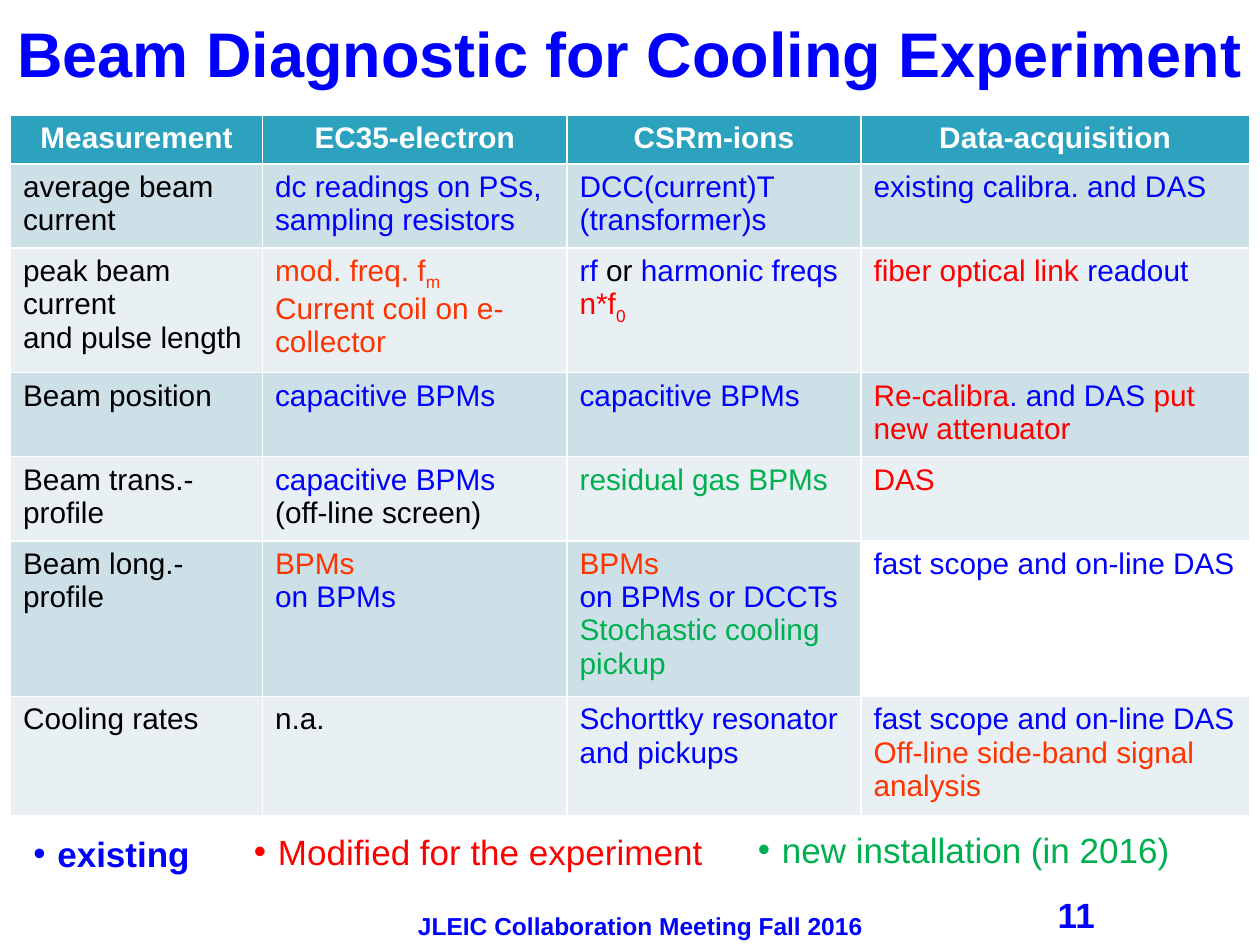
from lxml.etree import SubElement
from pptx import Presentation
from pptx.dml.color import RGBColor
from pptx.enum.text import MSO_ANCHOR as Anchor, PP_ALIGN as Align
from pptx.oxml.ns import qn
from pptx.util import Inches, Pt

BLACK, WHITE, BLUE = "000000", "FFFFFF", "0000FF"
RED, ORANGE, GREEN = "FF0000", "FF3300", "00B050"
TEAL, BAND_DARK, BAND_LIGHT = "2DA2BF", "CDE0E8", "E8F0F4"
COLUMNS, ROWS = 120, 90


def rgb(code):
    return RGBColor.from_string(code)


deck = Presentation()
deck.slide_width, deck.slide_height = Inches(10), Inches(7.5)
column, row = deck.slide_width / COLUMNS, deck.slide_height / ROWS
slide = deck.slides.add_slide(deck.slide_layouts[6])


def add_label(text, area, size, colour, bold=True, anchor=Anchor.TOP, bullet=False):
    left, top, width, height = area
    label = slide.shapes.add_textbox(int(left * column), int(top * row),
                                     int(width * column), int(height * row))
    frame = label.text_frame
    frame.word_wrap = not bullet
    frame.vertical_anchor = anchor
    paragraph = frame.paragraphs[0]
    paragraph.text = text
    paragraph.alignment = Align.LEFT if bullet else Align.CENTER
    if bullet:
        properties = paragraph._p.get_or_add_pPr()
        properties.set("marL", str(Inches(0.19)))
        properties.set("indent", str(-Inches(0.19)))
        SubElement(properties, qn("a:buFont")).set("typeface", "Arial")
        SubElement(properties, qn("a:buChar")).set("char", "•")
    font = paragraph.font
    font.name, font.size, font.bold = "Arial", Pt(size), bold
    font.color.rgb = rgb(colour)


add_label("Beam Diagnostic for Cooling Experiment", (0, 0, COLUMNS, 10), 36, BLUE,
          anchor=Anchor.MIDDLE)

headings = ["Measurement", "EC35-electron", "CSRm-ions", "Data-acquisition"]
measurements = [
    [[[("average beam current", BLACK)]],
     [[("dc readings on PSs, sampling resistors", BLUE)]],
     [[("DCC(current)T (transformer)s", BLUE)]],
     [[("existing calibra. and DAS", BLUE)]]],
    [[[("peak beam current", BLACK)], [("and pulse length", BLACK)]],
     [[("mod. freq. f", ORANGE), ("m", ORANGE, "subscript")],
      [("Current coil on e-collector", ORANGE)]],
     [[("rf", BLUE), (" or ", BLACK), ("harmonic freqs ", BLUE),
       ("n*f", RED), ("0", RED, "subscript")]],
     [[("fiber optical link ", RED), ("readout", BLUE)]]],
    [[[("Beam position", BLACK)]],
     [[("capacitive BPMs", BLUE)]],
     [[("capacitive BPMs", BLUE)]],
     [[("Re-calibra", RED), (". and DAS ", BLUE), ("put new attenuator", RED)]]],
    [[[("Beam trans.-profile", BLACK)]],
     [[("capacitive BPMs", BLUE)], [("(off-line screen)", BLACK)]],
     [[("residual gas BPMs", GREEN)]],
     [[("DAS", RED)]]],
    [[[("Beam long.-profile", BLACK)]],
     [[("BPMs", ORANGE)], [("on BPMs", BLUE)]],
     [[("BPMs", ORANGE)], [("on BPMs or DCCTs", BLUE)],
      [("Stochastic cooling pickup", GREEN)]],
     [[("fast scope and on-line DAS", BLUE)]]],
    [[[("Cooling rates", BLACK)]],
     [[("n.a.", BLACK)]],
     [[("Schorttky resonator and pickups", BLUE)]],
     [[("fast scope and on-line DAS", BLUE)],
      [("Off-line side-band signal analysis", ORANGE)]]],
]
contents = [[[[(heading, WHITE)]] for heading in headings]] + measurements
column_spans = [24, 29, 28, 37]
row_spans = [4.3, 7.6, 11.2, 7.6, 7.6, 13.9, 10.8]
unfilled = (5, 3)

diagnostics = slide.shapes.add_table(
    len(row_spans), len(column_spans), int(column), int(11 * row),
    int(sum(column_spans) * column), int(sum(row_spans) * row)).table
for table_column, span in zip(diagnostics.columns, column_spans):
    table_column.width = int(span * column)
for table_row, span in zip(diagnostics.rows, row_spans):
    table_row.height = int(span * row)

for r, cells in enumerate(contents):
    band = TEAL if r == 0 else BAND_DARK if r % 2 else BAND_LIGHT
    for c, lines in enumerate(cells):
        cell = diagnostics.cell(r, c)
        if (r, c) == unfilled:
            cell.fill.background()
        else:
            cell.fill.solid()
            cell.fill.fore_color.rgb = rgb(band)
        for n, pieces in enumerate(lines):
            frame = cell.text_frame
            paragraph = frame.add_paragraph() if n else frame.paragraphs[0]
            paragraph.alignment = Align.LEFT if r else Align.CENTER
            font = paragraph.font
            font.name, font.size, font.bold = "Arial", Pt(17), r == 0
            for text, colour, *position in pieces:
                run = paragraph.add_run()
                run.text = text
                run.font.color.rgb = rgb(colour)
                if position:
                    run._r.get_or_add_rPr().set("baseline", "-25000")

for meaning, area, colour, bold in [
    ("existing", (2, 78.7, 17.4, 5.3), BLUE, True),
    ("Modified for the experiment", (23, 78.5, 46.4, 5.3), RED, False),
    ("new installation (in 2016)", (71, 78.3, 45, 5.3), GREEN, False),
]:
    add_label(meaning, area, 20, colour, bold, bullet=True)

add_label("JLEIC Collaboration Meeting Fall 2016", (35, 86.2, 52, 4.8), 14, BLUE)
add_label("11", (98, 84.5, 9, 4.5), 20, BLUE)

deck.save("out.pptx")
